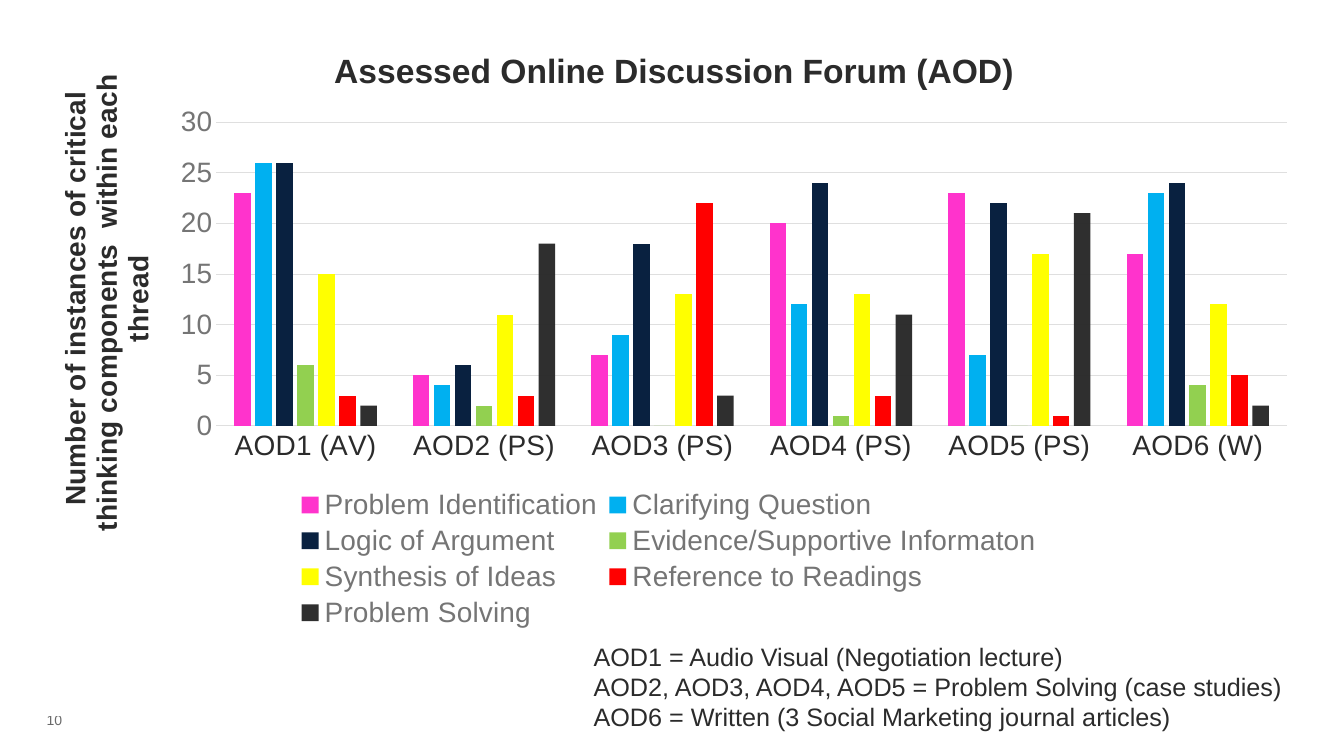
from dataclasses import dataclass

from lxml import etree
from pptx import Presentation
from pptx import util as u
from pptx.chart.data import CategoryChartData
from pptx.dml.color import RGBColor
from pptx.enum import chart as charts, text
from pptx.oxml import ns


@dataclass(frozen=True)
class Theme:
    font: str = "Arial"
    ink: str = "2B2B2B"
    muted: str = "757575"
    grid: str = "DFDFDF"
    title_size: int = 24
    chart_size: int = 20
    note_size: int = 18
    number_size: int = 10


THEME = Theme()

CATEGORIES = ["AOD1 (AV)", "AOD2 (PS)", "AOD3 (PS)", "AOD4 (PS)", "AOD5 (PS)", "AOD6 (W)"]
SERIES = [
    ("Problem Identification", "FF33CC", (23, 5, 7, 20, 23, 17)),
    ("Clarifying Question", "00B0F0", (26, 4, 9, 12, 7, 23)),
    ("Logic of Argument", "092140", (26, 6, 18, 24, 22, 24)),
    ("Evidence/Supportive Informaton", "92D050", (6, 2, 0, 1, 0, 4)),
    ("Synthesis of Ideas", "FFFF00", (15, 11, 13, 13, 17, 12)),
    ("Reference to Readings", "FF0000", (3, 3, 22, 3, 1, 5)),
    ("Problem Solving", THEME.ink, (2, 18, 3, 11, 21, 2)),
]
NOTES = [
    "AOD1 = Audio Visual (Negotiation lecture)",
    "AOD2, AOD3, AOD4, AOD5 = Problem Solving (case studies)",
    "AOD6 = Written (3 Social Marketing journal articles)",
]


# Styling helpers
def style_font(font, size, color=THEME.ink, bold=False):
    font.name, font.size, font.bold = THEME.font, u.Pt(size), bold
    font.color.rgb = RGBColor.from_string(color)


def style_line(line, color):
    line.color.rgb = RGBColor.from_string(color)
    line.width = u.Pt(0.75)


def set_opacity(element, percent):
    for color in element.iter(ns.qn("a:srgbClr")):
        etree.SubElement(color, ns.qn("a:alpha")).set("val", str(percent * 1000))


def place(element, after, inner=False, **fractions):
    """Place a chart part by fractions of the chart; `after` names its preceding child."""
    for old in element.findall(ns.qn("c:layout")):
        element.remove(old)
    layout = etree.Element(ns.qn("c:layout"))
    manual = etree.SubElement(layout, ns.qn("c:manualLayout"))
    settings = [("layoutTarget", "inner")] if inner else []
    settings += [("xMode", "edge"), ("yMode", "edge"), *fractions.items()]
    for name, value in settings:
        etree.SubElement(manual, ns.qn(f"c:{name}")).set("val", str(value))
    if after:
        element.find(ns.qn(after)).addnext(layout)
    else:
        element.insert(0, layout)


# Slide elements
def add_text(slide, box, lines, size):
    shape = slide.shapes.add_textbox(*map(u.Cm, box))
    frame = shape.text_frame
    frame.word_wrap = True
    frame.text = "\n".join(lines)
    for paragraph in frame.paragraphs:
        style_font(paragraph.font, size)
    return shape


def add_slide_number(slide, box, number):
    shape = add_text(slide, box, [number], THEME.number_size)
    frame = shape.text_frame
    frame.margin_left = frame.margin_right = frame.margin_top = frame.margin_bottom = 0
    frame.vertical_anchor = text.MSO_ANCHOR.MIDDLE
    frame.paragraphs[0].alignment = text.PP_ALIGN.CENTER
    set_opacity(shape.element, 70)


def set_title(title, wording, size):
    title.text_frame.text = wording
    style_font(title.text_frame.paragraphs[0].runs[0].font, size, bold=True)


def style_axes(chart):
    category_axis, value_axis = chart.category_axis, chart.value_axis
    for axis, color in ((category_axis, THEME.ink), (value_axis, THEME.muted)):
        axis.major_tick_mark = axis.minor_tick_mark = charts.XL_TICK_MARK.NONE
        style_font(axis.tick_labels.font, THEME.chart_size, color)
    style_line(category_axis.format.line, THEME.grid)
    value_axis.format.line.fill.background()
    style_line(value_axis.major_gridlines.format.line, THEME.grid)
    value_axis.minimum_scale, value_axis.maximum_scale, value_axis.major_unit = 0, 30, 5

    title = value_axis.axis_title
    set_title(
        title,
        "Number of instances of critical thinking components  within each  thread",
        THEME.chart_size,
    )
    body = next(title._element.iter(ns.qn("a:bodyPr")))
    body.set("rot", "-5400000")
    body.set("vert", "horz")
    place(title._element, "c:tx", x=0.02, y=0.07)


def add_forum_chart(slide, box):
    data = CategoryChartData()
    data.categories = CATEGORIES
    for name, _, values in SERIES:
        data.add_series(name, values)
    chart = slide.shapes.add_chart(
        charts.XL_CHART_TYPE.COLUMN_CLUSTERED, *map(u.Cm, box), data
    ).chart
    style_font(chart.font, THEME.chart_size)

    # Columns
    plot = chart.plots[0]
    plot.gap_width, plot.overlap, plot.vary_by_categories = 219, -27, False
    for series, (_, color, _) in zip(plot.series, SERIES):
        series.format.fill.solid()
        series.format.fill.fore_color.rgb = RGBColor.from_string(color)
    set_opacity(plot.series[-1]._element, 98)
    place(chart._chartSpace.chart.plotArea, None, inner=True, x=0.148, y=0.168, w=0.833, h=0.492)
    style_axes(chart)

    # Title and legend
    set_title(chart.chart_title, "Assessed Online Discussion Forum (AOD)", THEME.title_size)
    place(chart.chart_title._element, "c:tx", x=0.235, y=0.04)
    chart.has_legend = True
    legend = chart.legend
    legend.position = charts.XL_LEGEND_POSITION.BOTTOM
    legend.include_in_layout = False
    style_font(legend.font, THEME.chart_size, THEME.muted)
    place(legend._element, "c:legendPos", x=0.205, y=0.755, w=0.59, h=0.24)


def main():
    presentation = Presentation()
    presentation.slide_width, presentation.slide_height = u.Cm(33.87), u.Cm(19.05)
    slide = presentation.slides.add_slide(presentation.slide_layouts[6])
    add_slide_number(slide, (0.66, 17.83, 1.42, 0.64), "10")
    add_text(slide, (14.71, 16.03, 19.15, 2.57), NOTES, THEME.note_size)
    add_forum_chart(slide, (0.66, 0.46, 32.39, 15.57))
    presentation.save("out.pptx")


if __name__ == "__main__":
    main()
